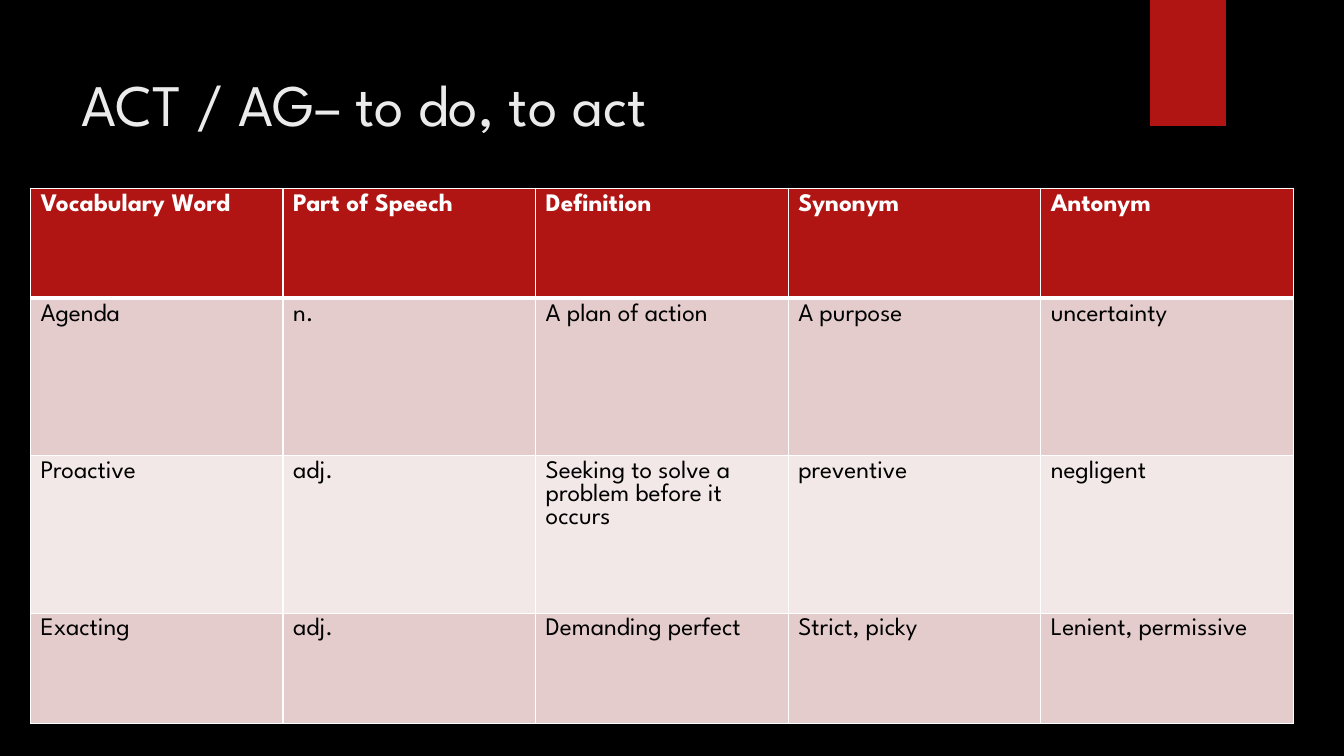
import pptx
import pptx.dml.color
import pptx.enum.shapes
import pptx.enum.text
import pptx.oxml
import pptx.oxml.ns
import pptx.util

Pt = pptx.util.Pt
RGBColor = pptx.dml.color.RGBColor

BLACK = RGBColor(0x00, 0x00, 0x00)
WHITE = RGBColor(0xFF, 0xFF, 0xFF)
TITLE_GREY = RGBColor(0xEB, 0xEB, 0xEB)
RED = RGBColor(0xB0, 0x15, 0x13)
DARK_BAND = RGBColor(0xE4, 0xCC, 0xCC)
LIGHT_BAND = RGBColor(0xF2, 0xE8, 0xE7)
FONT = "League Spartan"

VOCABULARY = [
    ["Vocabulary Word", "Part of Speech", "Definition", "Synonym", "Antonym"],
    ["Agenda", "n.", "A plan of action", "A purpose", "uncertainty"],
    ["Proactive", "adj.", "Seeking to solve a problem before it occurs",
     "preventive", "negligent"],
    ["Exacting", "adj.", "Demanding perfect", "Strict, picky",
     "Lenient, permissive"],
]
ROW_HEIGHTS = [78.6, 112.5, 112.5, 78.6]
COLUMN_WIDTH = 180.4


def style_paragraph(paragraph, size, color, bold=False):
    font = paragraph.font
    font.name = FONT
    font.size = Pt(size)
    font.bold = bold
    font.color.rgb = color


def add_ribbon(slide):
    ribbon = slide.shapes.add_shape(
        pptx.enum.shapes.MSO_SHAPE.RECTANGLE,
        Pt(821.6), Pt(0), Pt(54), Pt(90))
    ribbon.shadow.inherit = False
    ribbon.fill.solid()
    ribbon.fill.fore_color.rgb = RED
    ribbon.line.fill.background()


def set_title(slide, text):
    title = slide.shapes.title
    title.left, title.top = Pt(51), Pt(36)
    title.width, title.height = Pt(741), Pt(110)
    frame = title.text_frame
    frame.text = text
    frame.word_wrap = True
    frame.auto_size = pptx.enum.text.MSO_AUTO_SIZE.NONE
    frame.vertical_anchor = pptx.enum.text.MSO_ANCHOR.TOP
    frame.margin_top = Pt(12)
    heading = frame.paragraphs[0]
    heading.alignment = pptx.enum.text.PP_ALIGN.LEFT
    heading.line_spacing = 1.0
    style_paragraph(heading, 42, TITLE_GREY)


def set_borders(cell, top, bottom):
    properties = cell._tc.get_or_add_tcPr()
    for side, width in (("L", 1), ("R", 1), ("T", top), ("B", bottom)):
        properties.append(pptx.oxml.parse_xml(
            f'<a:ln{side} {pptx.oxml.ns.nsdecls("a")} w="{Pt(width)}">'
            f'<a:solidFill><a:srgbClr val="{WHITE}"/></a:solidFill>'
            f'</a:ln{side}>'))


def fill_cell(cell, text, row):
    header = row == 0
    set_borders(cell, 3 if row == 1 else 1, 3 if header else 1)
    cell.fill.solid()
    band = DARK_BAND if row % 2 else LIGHT_BAND
    cell.fill.fore_color.rgb = RED if header else band
    cell.text = text
    style_paragraph(cell.text_frame.paragraphs[0], 18,
                    WHITE if header else BLACK, header)


def add_vocabulary_table(slide):
    columns = len(VOCABULARY[0])
    table = slide.shapes.add_table(
        len(VOCABULARY), columns, Pt(21.8), Pt(134.5),
        Pt(COLUMN_WIDTH * columns), Pt(sum(ROW_HEIGHTS))).table
    for column in table.columns:
        column.width = Pt(COLUMN_WIDTH)
    for row, entries in enumerate(VOCABULARY):
        table.rows[row].height = Pt(ROW_HEIGHTS[row])
        for column, entry in enumerate(entries):
            fill_cell(table.cell(row, column), entry, row)


def main():
    presentation = pptx.Presentation()
    presentation.slide_width = Pt(960)
    presentation.slide_height = Pt(540)
    slide = presentation.slides.add_slide(presentation.slide_layouts[5])
    slide.background.fill.solid()
    slide.background.fill.fore_color.rgb = BLACK
    add_ribbon(slide)
    set_title(slide, "ACT / AG– to do, to act")
    add_vocabulary_table(slide)
    presentation.save("out.pptx")


if __name__ == "__main__":
    main()
